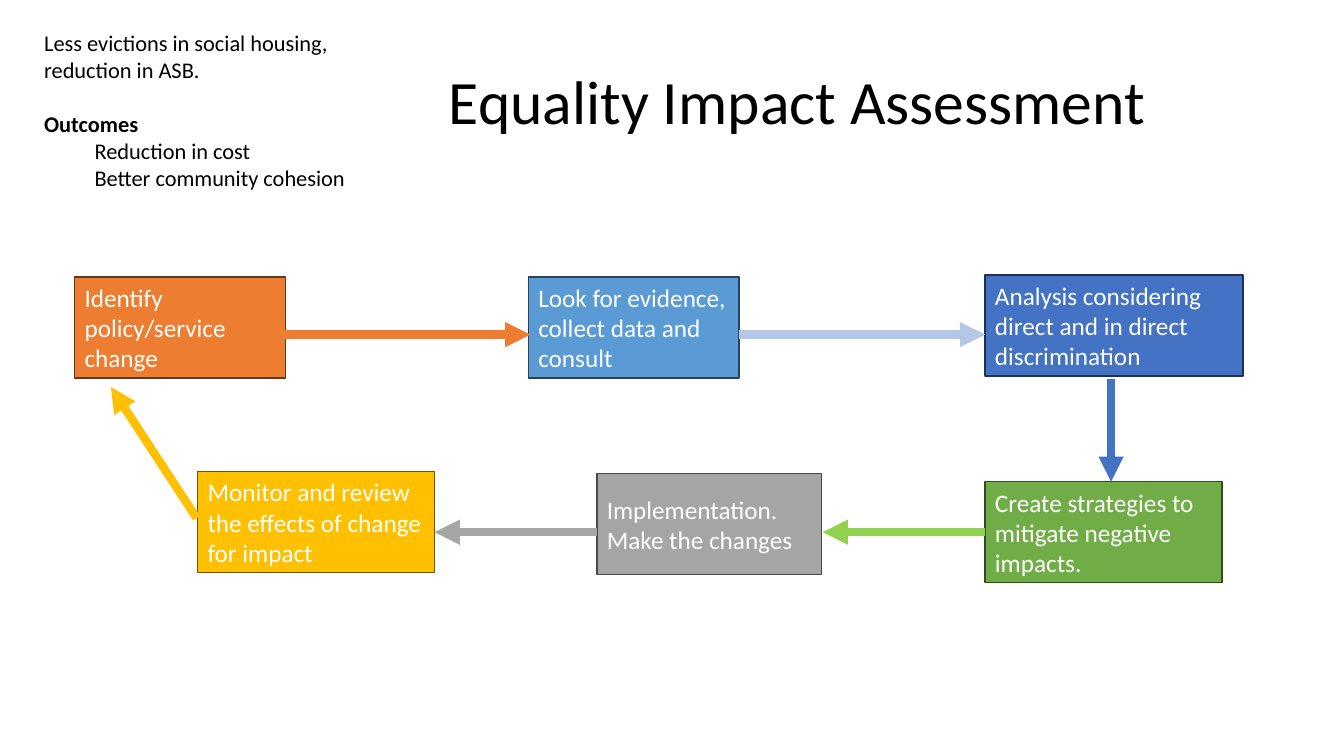
import pptx
import pptx.util
import pptx.dml.color
import pptx.enum.shapes
import pptx.enum.text
import pptx.oxml.ns
import lxml.etree

Inches = pptx.util.Inches
Pt = pptx.util.Pt
RGBColor = pptx.dml.color.RGBColor
PP_ALIGN = pptx.enum.text.PP_ALIGN
MSO_ANCHOR = pptx.enum.text.MSO_ANCHOR
qn = pptx.oxml.ns.qn

FONT = "Calibri"
BLACK = RGBColor(0x00, 0x00, 0x00)
WHITE = RGBColor(0xFF, 0xFF, 0xFF)
ORANGE = RGBColor(0xED, 0x7D, 0x31)
DARK_ORANGE = RGBColor(0x68, 0x37, 0x15)
SKY = RGBColor(0x5B, 0x9B, 0xD5)
DARK_SKY = RGBColor(0x28, 0x44, 0x5D)
PALE_BLUE = RGBColor(0xB4, 0xC7, 0xE7)
BLUE = RGBColor(0x44, 0x72, 0xC4)
DARK_BLUE = RGBColor(0x1E, 0x32, 0x56)
GREEN = RGBColor(0x70, 0xAD, 0x47)
DARK_GREEN = RGBColor(0x31, 0x4C, 0x1F)
LIME = RGBColor(0x92, 0xD0, 0x50)
GREY = RGBColor(0xA5, 0xA5, 0xA5)
DARK_GREY = RGBColor(0x48, 0x48, 0x48)
ARROW_GREY = RGBColor(0xA6, 0xA6, 0xA6)
GOLD = RGBColor(0xFF, 0xC0, 0x00)
DARK_GOLD = RGBColor(0x70, 0x54, 0x00)

STEP_HEIGHT = 1

# left, top, width, fill, outline, text
STEPS = [
    (0.74, 2.75, 2.09, ORANGE, DARK_ORANGE, "Identify policy/service change"),
    (5.24, 2.75, 2.09, SKY, DARK_SKY, "Look for evidence, collect data and consult"),
    (9.77, 2.73, 2.56, BLUE, DARK_BLUE,
     "Analysis considering direct and in direct discrimination"),
    (9.77, 4.78, 2.35, GREEN, DARK_GREEN,
     "Create strategies to mitigate negative impacts."),
    (5.92, 4.7, 2.23, GREY, DARK_GREY, "Implementation. Make the changes"),
    (1.96, 4.68, 2.35, GOLD, DARK_GOLD,
     "Monitor and review the effects of change for impact"),
]

# start, end, colour
ARROWS = [
    ((2.83, 3.32), (5.26, 3.32), ORANGE),
    ((7.33, 3.32), (9.77, 3.32), PALE_BLUE),
    ((11.02, 3.76), (11.02, 4.78), BLUE),
    ((9.77, 5.28), (8.16, 5.28), LIME),
    ((5.92, 5.28), (4.31, 5.28), ARROW_GREY),
    ((1.95, 5.14), (1.1, 3.84), GOLD),
]


def write_text(para, text, size=18, colour=BLACK, bold=False,
               align=PP_ALIGN.LEFT, indent=0, space_before=0):
    para.alignment = align
    para.space_before = Pt(space_before)
    if indent:
        para.level = 1
        properties = para._p.get_or_add_pPr()
        properties.set("marL", str(Inches(indent)))
        properties.set("indent", "0")
    span = para.add_run()
    span.text = text
    span.font.name = FONT
    span.font.size = Pt(size)
    span.font.bold = bold
    span.font.color.rgb = colour


def add_title(page, text):
    title = page.shapes.title
    title.left, title.top = Inches(2.83), Inches(0.39)
    title.width, title.height = Inches(10.16), Inches(1.29)
    title.text_frame.vertical_anchor = MSO_ANCHOR.MIDDLE
    para = title.text_frame.paragraphs[0]
    write_text(para, text, size=44, align=PP_ALIGN.CENTER)
    para.line_spacing = 0.9


def add_step(page, left, top, width, fill, outline, text):
    box = page.shapes.add_shape(
        pptx.enum.shapes.MSO_SHAPE.RECTANGLE,
        Inches(left), Inches(top), Inches(width), Inches(STEP_HEIGHT))
    box.shadow.inherit = False
    box.fill.solid()
    box.fill.fore_color.rgb = fill
    box.line.color.rgb = outline
    box.line.width = Pt(1)
    box.text_frame.word_wrap = True
    box.text_frame.vertical_anchor = MSO_ANCHOR.MIDDLE
    write_text(box.text_frame.paragraphs[0], text, colour=WHITE)


def add_arrow(page, start, end, colour):
    arrow = page.shapes.add_connector(
        pptx.enum.shapes.MSO_CONNECTOR.STRAIGHT,
        *(Inches(value) for value in start + end))
    arrow.line.color.rgb = colour
    arrow.line.width = Pt(6)
    lxml.etree.SubElement(arrow.line._get_or_add_ln(), qn("a:tailEnd"), type="triangle")
    lxml.etree.SubElement(arrow._element.spPr, qn("a:effectLst"))


def add_outcomes(page):
    box = page.shapes.add_textbox(Inches(0.34), Inches(0.24), Inches(3.26), Inches(1.72))
    frame = box.text_frame
    frame.word_wrap = True
    write_text(frame.paragraphs[0],
               "Less evictions in social housing, reduction in ASB.", size=16)
    write_text(frame.add_paragraph(), "Outcomes", size=16, bold=True, space_before=19.5)
    for outcome in ("Reduction in cost", "Better community cohesion"):
        write_text(frame.add_paragraph(), outcome, size=16, indent=0.5)


def main():
    deck = pptx.Presentation()
    deck.slide_width, deck.slide_height = Inches(13.33), Inches(7.5)
    page = deck.slides.add_slide(deck.slide_layouts.get_by_name("Title Only"))
    add_title(page, "Equality Impact Assessment")
    for step in STEPS:
        add_step(page, *step)
    for arrow in ARROWS:
        add_arrow(page, *arrow)
    add_outcomes(page)
    deck.save("out.pptx")


if __name__ == "__main__":
    main()
